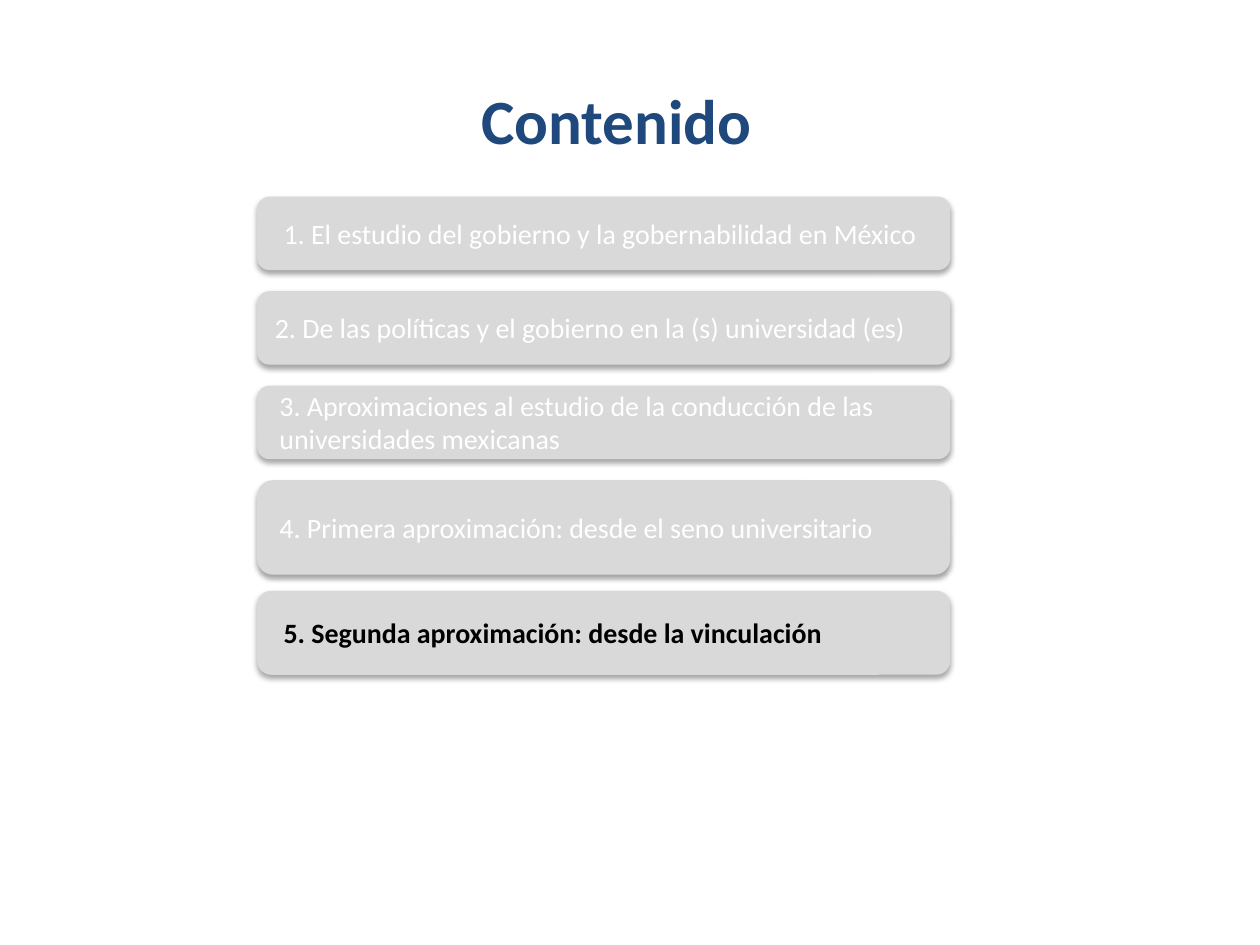
"""Build the Contenido slide: a title over five agenda bars, the last one highlighted."""
from dataclasses import dataclass

from lxml import etree
from pptx import Presentation
from pptx import util as u
from pptx.dml.color import RGBColor
from pptx.enum import shapes, text
from pptx.oxml import ns

BAR_LEFT, BAR_WIDTH, FIRST_TOP = 147, 396, 112.4
BAR_COLOUR = "D9D9D9"
TOPIC_FORMAT = {"name": "Calibri", "size": u.Pt(16), "bold": False}
CURRENT_FORMAT = TOPIC_FORMAT | {"bold": True}
TITLE_FORMAT = {"name": "Calibri", "size": u.Pt(36), "bold": True}


@dataclass
class Topic:
    wording: str
    bar_height: float
    gap_below: float
    label_left: float
    label_width: float
    label_height: float = 26.64
    colour: str = "FFFFFF"
    current: bool = False


TOPICS = [
    Topic("1. El estudio del gobierno y la gobernabilidad en México", 42, 12, 155, 380),
    Topic("2. De las políticas y el gobierno en la (s) universidad (es)", 42, 12, 150, 380),
    Topic("3. Aproximaciones al estudio de la conducción de las universidades mexicanas",
          42, 12, 152.6, 390, label_height=46),
    Topic("4. Primera aproximación: desde el seno universitario", 54, 9.2, 152.6, 360),
    Topic("5. Segunda aproximación: desde la vinculación", 48, 0, 155, 360,
          colour="000000", current=True),
]


def rgb(colour: str) -> RGBColor:
    return RGBColor.from_string(colour)


def add_shadow(bar) -> None:
    bar.shadow.inherit = False
    effects = bar._element.spPr.find(ns.qn("a:effectLst"))
    shadow = etree.SubElement(effects, ns.qn("a:outerShdw"), blurRad=str(u.Pt(3.1)),
                              dist=str(u.Pt(1.8)), dir="5400000", rotWithShape="0")
    tint = etree.SubElement(shadow, ns.qn("a:srgbClr"), val="000000")
    etree.SubElement(tint, ns.qn("a:alpha"), val="35000")


def add_bar(slide, topic: Topic, top: float) -> None:
    bar = slide.shapes.add_shape(shapes.MSO_SHAPE.ROUNDED_RECTANGLE, u.Pt(BAR_LEFT),
                                 u.Pt(top), u.Pt(BAR_WIDTH), u.Pt(topic.bar_height))
    bar.fill.solid()
    bar.fill.fore_color.rgb = rgb(BAR_COLOUR)
    bar.line.fill.background()
    add_shadow(bar)


def add_label(slide, wording: str, left: float, top: float, width: float, height: float,
              colour: str, font_format: dict, wrap: bool = True) -> None:
    label = slide.shapes.add_textbox(u.Pt(left), u.Pt(top), u.Pt(width), u.Pt(height))
    frame = label.text_frame
    frame.word_wrap = wrap
    frame.auto_size = text.MSO_AUTO_SIZE.SHAPE_TO_FIT_TEXT
    run = frame.paragraphs[0].add_run()
    run.text = wording
    for attribute, value in font_format.items():
        setattr(run.font, attribute, value)
    run.font.color.rgb = rgb(colour)


def main() -> None:
    deck = Presentation()
    deck.slide_width, deck.slide_height = u.Pt(720), u.Pt(540)
    slide = deck.slides.add_slide(deck.slide_layouts[6])
    top = FIRST_TOP
    for topic in TOPICS:
        add_bar(slide, topic, top)
        label_top = top + (topic.bar_height - topic.label_height) / 2
        add_label(slide, topic.wording, topic.label_left, label_top, topic.label_width,
                  topic.label_height, topic.colour,
                  CURRENT_FORMAT if topic.current else TOPIC_FORMAT)
        top += topic.bar_height + topic.gap_below
    add_label(slide, "Contenido", 268, 43.2, 170.6, 51, "1F497D", TITLE_FORMAT, wrap=False)
    deck.save("out.pptx")


if __name__ == "__main__":
    main()
